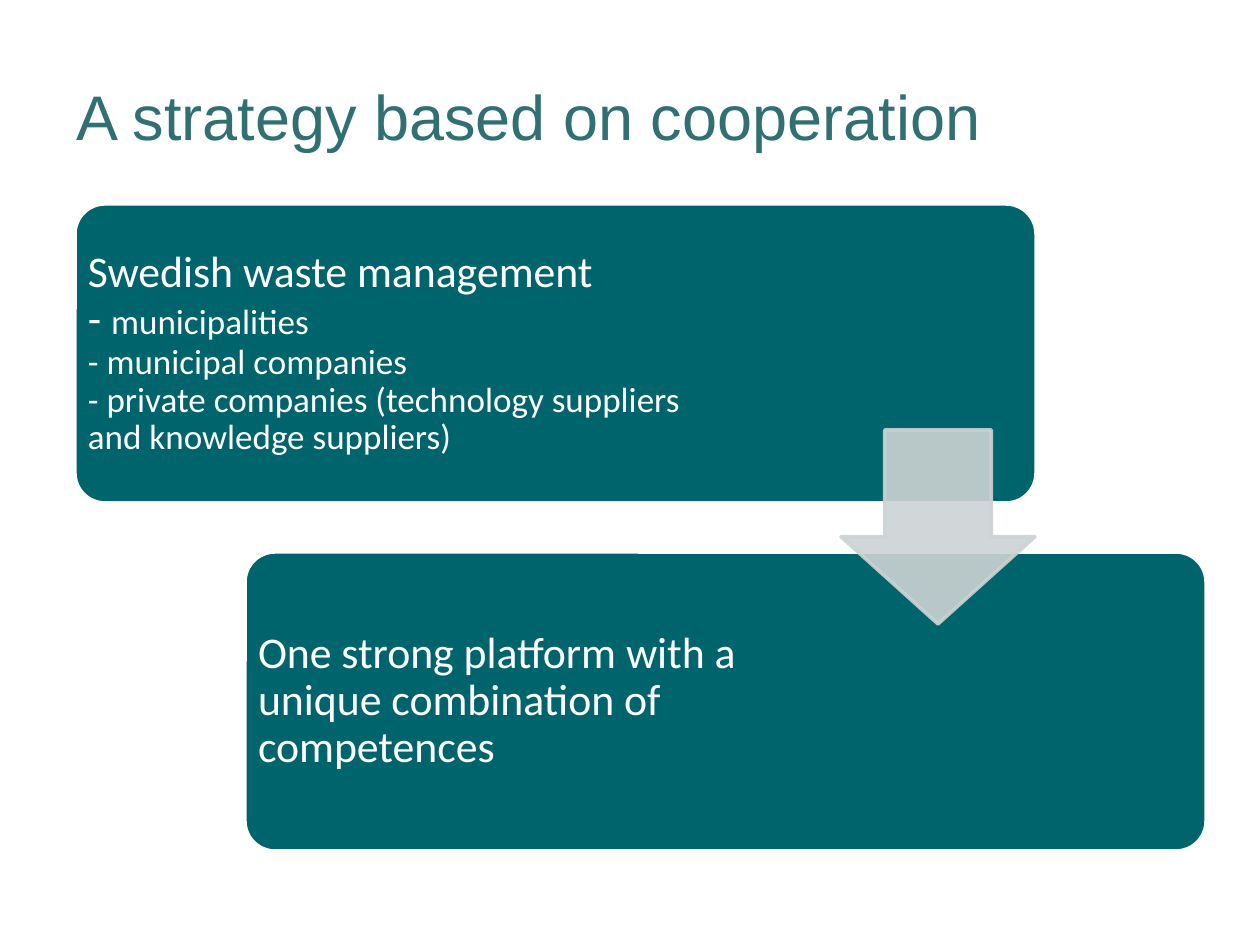
"""Build a slide on a strategy based on cooperation."""
from dataclasses import dataclass

from lxml.etree import SubElement
from pptx import Presentation
from pptx.dml.color import RGBColor
from pptx.enum.shapes import MSO_SHAPE
from pptx.enum.text import MSO_ANCHOR, MSO_AUTO_SIZE, PP_ALIGN
from pptx.oxml.ns import qn
from pptx.util import Pt

SCALE = 914400 / 126


@dataclass(frozen=True)
class Theme:
    title: str = "306F72"
    card: str = "00646C"
    arrow: str = "CCD3D4"
    white: str = "FFFFFF"
    head: int = 36
    large: int = 25
    small: int = 20
    edge: int = 2
    sans: str = "Arial"
    body: str = "Calibri"


def emu(*sizes):
    return [round(size * SCALE) for size in sizes]


def apply(target, values):
    for name, value in values.items():
        setattr(target, name, value)


class Deck:
    def __init__(self, theme):
        self.theme = theme
        self.file = Presentation()
        apply(self.file, dict(zip(("slide_width", "slide_height"), emu(1260, 945))))
        self.slide = self.file.slides.add_slide(self.file.slide_layouts[5])

    def style(self, font, size, color, face):
        apply(font, {"size": Pt(size), "name": face})
        font.color.rgb = RGBColor.from_string(color)

    def frame(self, frame):
        pad = emu(13)[0]
        apply(frame, {
            "word_wrap": True,
            "auto_size": MSO_AUTO_SIZE.NONE,
            "vertical_anchor": MSO_ANCHOR.MIDDLE,
            "margin_left": pad, "margin_right": pad,
            "margin_top": pad, "margin_bottom": pad,
        })
        return frame.paragraphs[0]

    def title(self, text, *box):
        shape = self.slide.shapes.title
        apply(shape, dict(zip(("left", "top", "width", "height"), emu(*box))))
        para = self.frame(shape.text_frame)
        para.alignment = PP_ALIGN.LEFT
        run = para.add_run()
        run.text = text
        self.style(run.font, self.theme.head, self.theme.title, self.theme.sans)

    def shape(self, kind, box, fill, line, adjust, alpha=100):
        shape = self.slide.shapes.add_shape(kind, *emu(*box))
        shape.shadow.inherit = False
        for spot, value in enumerate(adjust):
            shape.adjustments[spot] = value
        shape.line.width = Pt(self.theme.edge)
        shape.fill.solid()
        for paint, color in ((shape.fill.fore_color, fill), (shape.line.color, line)):
            paint.rgb = RGBColor.from_string(color)
        if alpha < 100:
            for color in list(shape.element.spPr.iter(qn("a:srgbClr"))):
                SubElement(color, qn("a:alpha"), val=str(alpha * 1000))

    def text(self, box, lines):
        para = self.frame(self.slide.shapes.add_textbox(*emu(*box)).text_frame)
        para.line_spacing = 0.9
        for row, parts in enumerate(lines):
            if row:
                para.add_line_break()
            for text, size in parts:
                run = para.add_run()
                run.text = text
                self.style(run.font, size, self.theme.white, self.theme.body)

    def card(self, left, top, wide, lines):
        theme = self.theme
        self.shape(MSO_SHAPE.ROUNDED_RECTANGLE, (left, top, 961, 299),
                   theme.card, theme.white, [0.1])
        self.text((left, top, wide, 299), lines)

    def arrow(self, *box):
        color = self.theme.arrow
        self.shape(MSO_SHAPE.DOWN_ARROW, box, color, color, [0.55, 0.45], 90)


def main():
    theme = Theme()
    deck = Deck(theme)
    large, small = theme.large, theme.small
    cards = [
        (669, [
            [("Swedish waste management", large)],
            [("- ", large), ("municipalities", small)],
            [("- municipal companies", small)],
            [("- private companies (technology suppliers and knowledge suppliers)", small)],
        ]),
        (597, [[("One strong platform with a unique combination of competences", large)]]),
    ]
    deck.title("A strategy based on cooperation", 64, 26, 1062, 179)
    for step, (wide, lines) in enumerate(cards):
        deck.card(75 + 170 * step, 204 + 348 * step, wide, lines)
    deck.arrow(841, 430, 194, 194)
    deck.file.save("out.pptx")


if __name__ == "__main__":
    main()
